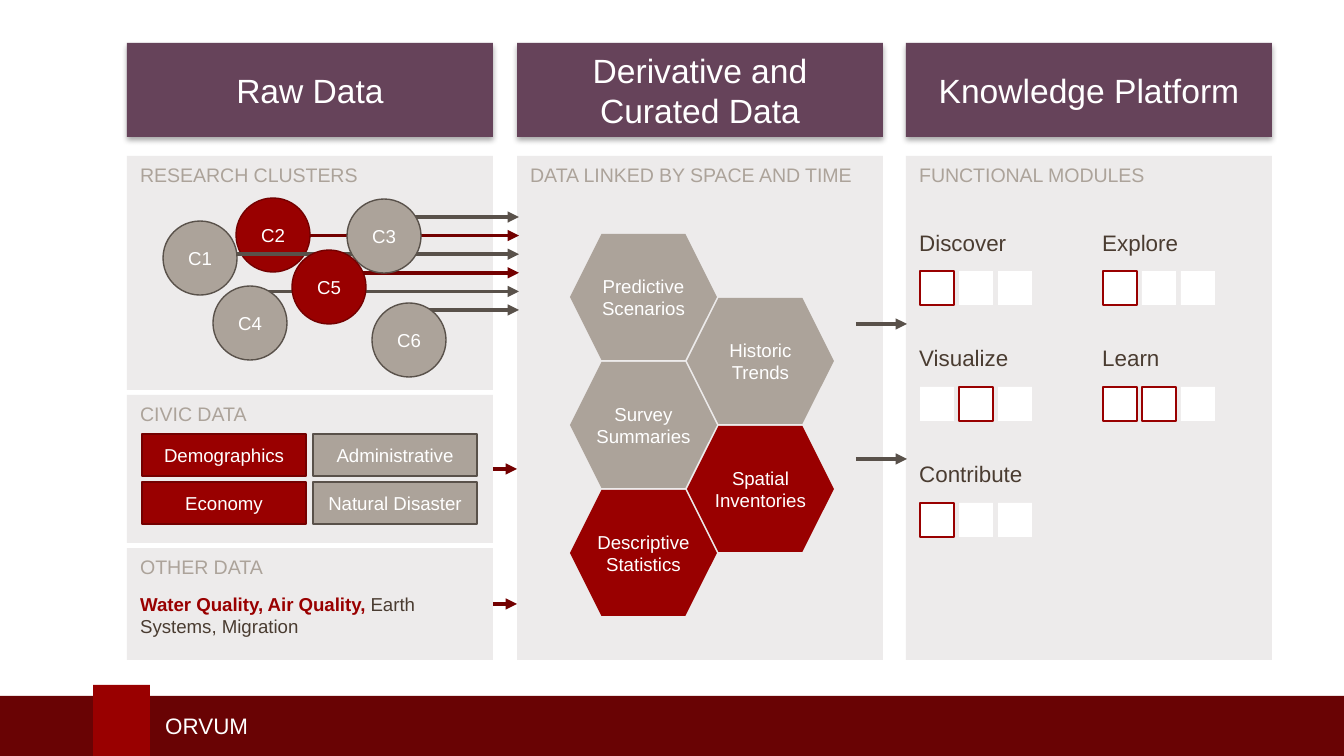
from lxml.etree import SubElement
from pptx import Presentation
from pptx.dml.color import RGBColor
from pptx.enum.shapes import MSO_CONNECTOR as Link, MSO_SHAPE as Preset
from pptx.enum.text import MSO_ANCHOR as Anchor, PP_ALIGN as Align
from pptx.oxml.ns import qn
from pptx.util import Emu, Pt

WHITE = RGBColor(0xFF, 0xFF, 0xFF)
PLUM = RGBColor(0x66, 0x43, 0x5A)
CRIMSON = RGBColor(0x99, 0x00, 0x00)
DARK_RED = RGBColor(0x73, 0x00, 0x00)
MAROON = RGBColor(0x69, 0x03, 0x04)
TAUPE = RGBColor(0xAC, 0xA3, 0x9A)
DARK_TAUPE = RGBColor(0x59, 0x51, 0x4A)
BROWN = RGBColor(0x4A, 0x3C, 0x31)
PALE = RGBColor(0xED, 0xEB, 0xEB)
OUTLINE = {CRIMSON: DARK_RED, TAUPE: DARK_TAUPE}

EMU_PER_PX = 914400 / 134.4
COLUMN_X, COLUMN_W = (127, 517, 906), 366
HEADER_Y, HEADER_H = 43, 94
CLUSTER_SIZE = 74
FLOW_Y, FLOW_STEP, FLOW_END = 217, 18.6, 519
TOPIC_X, TOPIC_Y, TOPIC_W, TOPIC_H = 142, 434, 164, 42
TOPIC_STEP_X, TOPIC_STEP_Y = 171, 48
HEX_X, HEX_Y, HEX_W, HEX_H = 570, 234, 147, 126
HEX_STEP_X, HEX_STEP_Y = 117, 64
MODULE_Y, MODULE_STEP_X, MODULE_STEP_Y = 222, 183, 116
SLOT_DX, SLOT_DY, SLOT_SIZE, SLOT_STEP = 14, 49, 34, 39

ORGANISATION = "ORVUM"
HEADERS = ["Raw Data", "Derivative and Curated Data", "Knowledge Platform"]
PANELS = [  # title, column, top, height
    ("RESEARCH CLUSTERS", 0, 156, 234),
    ("DATA LINKED BY SPACE AND TIME", 1, 156, 504),
    ("CIVIC DATA", 0, 395, 148),
    ("OTHER DATA", 0, 548, 112),
    ("FUNCTIONAL MODULES", 2, 156, 504),
]
BACK_CLUSTERS = [("C1", 163, 221, TAUPE), ("C2", 236, 198, CRIMSON)]
FRONT_CLUSTERS = [("C3", 347, 199, TAUPE), ("C6", 372, 303, TAUPE),
                  ("C5", 292, 250, CRIMSON), ("C4", 213, 286, TAUPE)]
CLUSTER_FLOWS = [(395, DARK_TAUPE), (310, DARK_RED), (237, DARK_TAUPE),
                 (317, DARK_RED), (237, DARK_TAUPE), (427, DARK_TAUPE)]
TOPICS = [("Demographics", CRIMSON), ("Administrative", TAUPE),
          ("Economy", CRIMSON), ("Natural Disaster", TAUPE)]
OTHER_DATA = [("Water Quality, Air Quality, ", CRIMSON, True),
              ("Earth Systems, Migration", BROWN, False)]
DERIVED = [("Predictive Scenarios", TAUPE), ("Historic Trends", TAUPE),
           ("Survey Summaries", TAUPE), ("Spatial Inventories", CRIMSON),
           ("Descriptive Statistics", CRIMSON)]
MODULES = [("Discover", {0}), ("Explore", {0}), ("Visualize", {1}),
           ("Learn", {0, 1}), ("Contribute", {0})]
PLATFORM_FLOW_Y = (324, 459)


def px(value):
    return Emu(round(value * EMU_PER_PX))


def write(shape, text, size=10, color=WHITE, align=Align.CENTER,
          anchor=Anchor.MIDDLE, side_inset=None):
    frame = shape.text_frame
    frame.word_wrap = True
    frame.vertical_anchor = anchor
    if side_inset is not None:
        frame.margin_left = frame.margin_right = px(side_inset)
    paragraph = frame.paragraphs[0]
    paragraph.alignment = align
    pieces = [(text, color, False)] if isinstance(text, str) else text
    for words, tint, bold in pieces:
        run = paragraph.add_run()
        run.text = words
        run.font.name, run.font.size, run.font.bold = "Arial", Pt(size), bold
        run.font.color.rgb = tint


def add_block(slide, preset, box, fill, outline=None, weight=0.75):
    block = slide.shapes.add_shape(preset, *map(px, box))
    block.shadow.inherit = False
    block.fill.solid()
    block.fill.fore_color.rgb = fill
    if outline is None:
        block.line.fill.background()
    else:
        block.line.color.rgb = outline
        block.line.width = Pt(weight)
    return block


def add_label(slide, box, text, **style):
    label = slide.shapes.add_textbox(*map(px, box))
    write(label, text, align=Align.LEFT, **style)


def add_flow(slide, start, end, y, color, source=None):
    flow = slide.shapes.add_connector(Link.STRAIGHT, px(start), px(y), px(end), px(y))
    if source is not None:
        flow.begin_connect(source, 3)
    flow.line.color.rgb = color
    flow.line.width = Pt(2)
    SubElement(flow.line._get_or_add_ln(), qn("a:tailEnd"), type="triangle")
    SubElement(flow._element.spPr, qn("a:effectLst"))


def add_drop_shadow(block):
    effects = block._element.spPr.find(qn("a:effectLst"))
    drop = SubElement(effects, qn("a:outerShdw"), blurRad=str(Pt(3.1)),
                      dist=str(Pt(1.8)), dir="5400000", rotWithShape="0")
    tint = SubElement(drop, qn("a:srgbClr"), val="000000")
    SubElement(tint, qn("a:alpha"), val="35000")


def add_clusters(slide, clusters):
    for name, x, y, fill in clusters:
        cluster = add_block(slide, Preset.OVAL, (x, y, CLUSTER_SIZE, CLUSTER_SIZE),
                            fill, OUTLINE[fill])
        write(cluster, name)


def add_frame(slide):
    add_block(slide, Preset.RECTANGLE, (0, 696, 1344, 60), MAROON)
    add_block(slide, Preset.RECTANGLE, (93, 685, 57, 71), CRIMSON)
    add_label(slide, (152, 706, 531, 40), ORGANISATION, size=12)
    for title, x in zip(HEADERS, COLUMN_X):
        header = add_block(slide, Preset.RECTANGLE, (x, HEADER_Y, COLUMN_W, HEADER_H), PLUM)
        add_drop_shadow(header)
        write(header, title, size=18)
    panels = {}
    for title, column, y, height in PANELS:
        panel = add_block(slide, Preset.RECTANGLE,
                          (COLUMN_X[column], y, COLUMN_W, height), PALE)
        write(panel, title, size=10.5, color=TAUPE, align=Align.LEFT, anchor=Anchor.TOP)
        panels[title] = panel
    return panels


def add_raw_data(slide, panels):
    add_clusters(slide, BACK_CLUSTERS)
    for i, (start, color) in enumerate(CLUSTER_FLOWS):
        add_flow(slide, start, FLOW_END, FLOW_Y + i * FLOW_STEP, color)
    add_clusters(slide, FRONT_CLUSTERS)
    for i, (name, fill) in enumerate(TOPICS):
        row, column = divmod(i, 2)
        topic = add_block(slide, Preset.RECTANGLE,
                          (TOPIC_X + column * TOPIC_STEP_X, TOPIC_Y + row * TOPIC_STEP_Y,
                           TOPIC_W, TOPIC_H), fill, OUTLINE[fill])
        write(topic, name)
    add_label(slide, (COLUMN_X[0], 586, 335, 59), OTHER_DATA, anchor=Anchor.TOP)
    for title, y in (("CIVIC DATA", 469), ("OTHER DATA", 604)):
        add_flow(slide, COLUMN_X[0] + COLUMN_W, COLUMN_X[1], y, DARK_RED, panels[title])


def add_derived_data(slide):
    for i, (name, fill) in enumerate(DERIVED):
        cell = add_block(slide, Preset.HEXAGON,
                         (HEX_X + i % 2 * HEX_STEP_X, HEX_Y + i * HEX_STEP_Y,
                          HEX_W, HEX_H), fill)
        write(cell, name, side_inset=0)


def add_platform(slide):
    for i, (name, active) in enumerate(MODULES):
        row, column = divmod(i, 2)
        x = COLUMN_X[2] + column * MODULE_STEP_X
        y = MODULE_Y + row * MODULE_STEP_Y
        add_label(slide, (x, y, 152, 41), name, size=12, color=BROWN, anchor=Anchor.TOP)
        for slot in range(3):
            add_block(slide, Preset.RECTANGLE,
                      (x + SLOT_DX + slot * SLOT_STEP, y + SLOT_DY, SLOT_SIZE, SLOT_SIZE),
                      WHITE, CRIMSON if slot in active else None, weight=1)
    for y in PLATFORM_FLOW_Y:
        add_flow(slide, 856, 907, y, DARK_TAUPE)


def main():
    """Build the data platform overview slide."""
    deck = Presentation()
    deck.slide_width, deck.slide_height = px(1344), px(756)
    slide = deck.slides.add_slide(deck.slide_layouts[6])
    panels = add_frame(slide)
    add_raw_data(slide, panels)
    add_derived_data(slide)
    add_platform(slide)
    deck.save("out.pptx")


if __name__ == "__main__":
    main()
